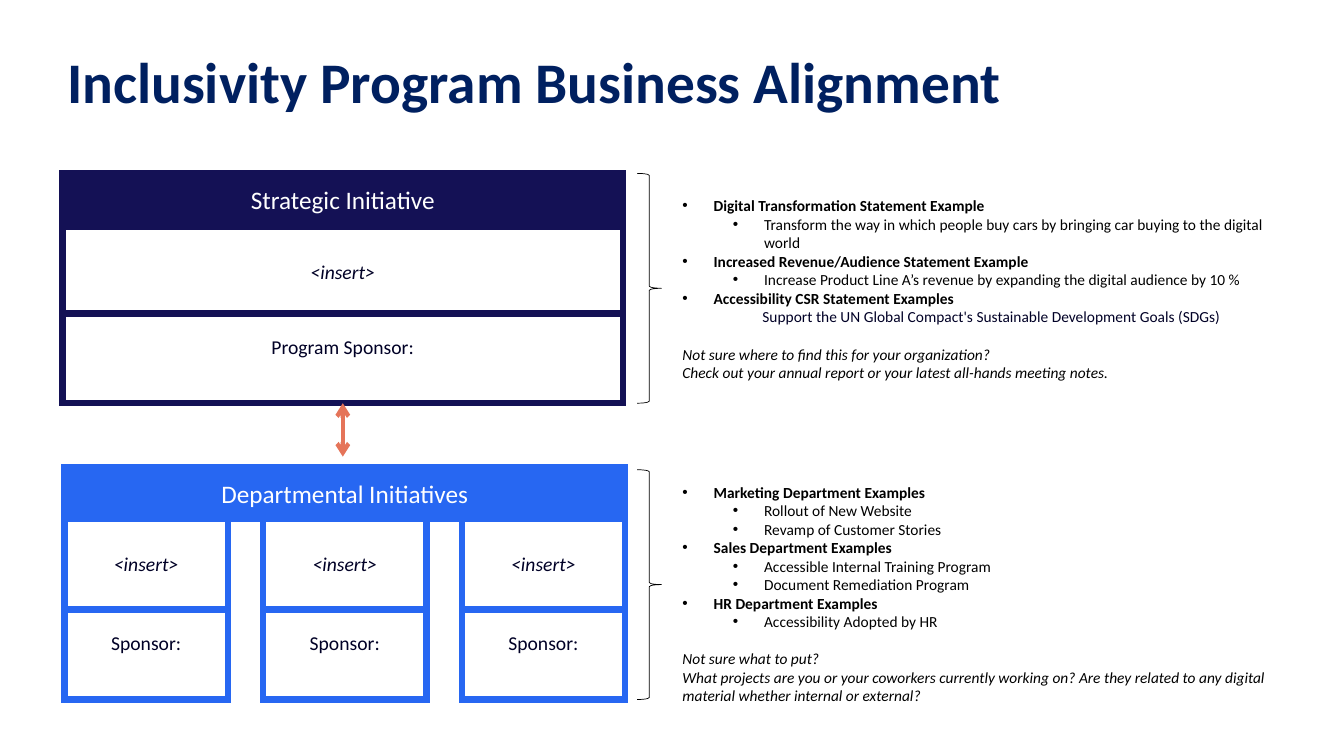
"""Build the slide that aligns an inclusivity program with business initiatives."""
from lxml.etree import SubElement
from pptx import Presentation
from pptx.dml.color import RGBColor
from pptx.enum.shapes import MSO_CONNECTOR, MSO_SHAPE
from pptx.enum.text import MSO_ANCHOR, PP_ALIGN
from pptx.oxml.ns import qn
from pptx.util import Inches, Pt


class Theme:
    face = "Calibri"
    title = RGBColor.from_string("002060")
    navy = RGBColor.from_string("141155")
    blue = RGBColor.from_string("2767F2")
    coral = RGBColor.from_string("E57459")
    ink = RGBColor.from_string("000026")
    black = RGBColor.from_string("000000")
    white = RGBColor.from_string("FFFFFF")
    huge, head, body, note = Pt(41), Pt(18), Pt(14), Pt(11)
    edge, thin, arrow = Pt(4.5), Pt(0.5), Pt(3)


def style(para, size, color, bold=False, italic=False):
    font = para.font
    font.name, font.size, font.color.rgb = Theme.face, size, color
    font.bold, font.italic = bold, italic


def add_box(left, top, width, height, text, edge, kind):
    box = slide.shapes.add_shape(
        MSO_SHAPE.RECTANGLE, Inches(left), Inches(top), Inches(width), Inches(height))
    box.shadow.inherit = False
    box.fill.solid()
    box.fill.fore_color.rgb = edge if kind == "head" else Theme.white
    box.line.color.rgb = edge
    box.line.width = Theme.edge
    SubElement(box.line._get_or_add_ln(), qn("a:miter"), lim="800000")
    frame = box.text_frame
    frame.text = text
    frame.word_wrap = True
    frame.vertical_anchor = MSO_ANCHOR.MIDDLE
    if kind == "sponsor":
        frame.margin_bottom = Inches(0.29)
    para = frame.paragraphs[0]
    para.alignment = PP_ALIGN.CENTER
    if kind == "head":
        style(para, Theme.head, Theme.white)
    else:
        style(para, Theme.body, Theme.ink, italic=kind == "insert")
    return box


deck = Presentation()
deck.slide_width, deck.slide_height = Inches(13.33), Inches(7.5)
slide = deck.slides.add_slide(deck.slide_layouts[5])

title = slide.shapes.title
title.left, title.top, title.width, title.height = map(Inches, (0.36, 0.4, 9.89, 0.79))
title.text_frame.text = "Inclusivity Program Business Alignment"
title.text_frame.vertical_anchor = MSO_ANCHOR.MIDDLE
para = title.text_frame.paragraphs[0]
para.alignment = PP_ALIGN.CENTER
style(para, Theme.huge, Theme.title, bold=True)

add_box(0.62, 1.72, 5.56, 0.52, "Strategic Initiative", Theme.navy, "head")
add_box(0.62, 2.25, 5.56, 0.9, "<insert>", Theme.navy, "insert")
sponsor = add_box(0.62, 3.11, 5.56, 0.89, "Program Sponsor:", Theme.navy, "sponsor")

link = slide.shapes.add_connector(
    MSO_CONNECTOR.STRAIGHT, Inches(3.4), Inches(4), Inches(3.4), Inches(4.53))
link.begin_connect(sponsor, 2)
link.line.color.rgb = Theme.coral
link.line.width = Theme.arrow
for end in ("a:headEnd", "a:tailEnd"):
    SubElement(link.line._get_or_add_ln(), qn(end), type="arrow")
SubElement(link._element.spPr, qn("a:effectLst"))

add_box(0.64, 4.63, 5.56, 0.52, "Departmental Initiatives", Theme.blue, "head")
for col in range(3):
    left = 0.64 + col * 1.97
    add_box(left, 5.15, 1.62, 0.89, "<insert>", Theme.blue, "insert")
    add_box(left, 6.05, 1.62, 0.89, "Sponsor:", Theme.blue, "sponsor")

notes = [
    (1.72, 1.9, 1.77, [
        ("topic", "Digital Transformation Statement Example"),
        ("item", "Transform the way in which people buy cars by bringing car buying "
                 "to the digital world"),
        ("topic", "Increased Revenue/Audience Statement Example"),
        ("item", "Increase Product Line A’s revenue by expanding the digital audience by 10 %"),
        ("topic", "Accessibility CSR Statement Examples"),
        ("goal", "Support the UN Global Compact's Sustainable Development Goals (SDGs)"),
        ("ask", "Not sure where to find this for your organization?"),
        ("hint", "Check out your annual report or your latest all-hands meeting notes."),
    ]),
    (4.66, 4.74, 2.32, [
        ("topic", "Marketing Department Examples"),
        ("item", "Rollout of New Website"),
        ("item", "Revamp of Customer Stories"),
        ("topic", "Sales Department Examples"),
        ("item", "Accessible Internal Training Program"),
        ("item", "Document Remediation Program"),
        ("topic", "HR Department Examples"),
        ("item", "Accessibility Adopted by HR"),
        ("ask", "Not sure what to put?"),
        ("hint", "What projects are you or your coworkers currently working on? "
                 "Are they related to any digital material whether internal or external?"),
    ]),
]
indents = {"topic": 0.31, "item": 0.81}

for top, start, height, lines in notes:
    brace = slide.shapes.add_shape(
        MSO_SHAPE.RIGHT_BRACE, Inches(6.32), Inches(top), Inches(0.24), Inches(2.28))
    brace.shadow.inherit = False
    brace.fill.background()
    brace.line.color.rgb = Theme.black
    brace.line.width = Theme.thin

    frame = slide.shapes.add_textbox(
        Inches(6.67), Inches(start), Inches(6.33), Inches(height)).text_frame
    frame.word_wrap = True
    for row, (kind, text) in enumerate(lines):
        para = frame.add_paragraph() if row else frame.paragraphs[0]
        para.text = text
        style(para, Theme.note, Theme.ink if kind == "goal" else Theme.black,
              bold=kind == "topic", italic=kind in ("ask", "hint"))
        if kind == "goal":
            para.alignment = PP_ALIGN.CENTER
        if kind == "ask":
            para.space_before = Pt(13.4)
        if kind in indents:
            para.level = int(kind == "item")
            props = para._p.get_or_add_pPr()
            props.set("marL", str(Inches(indents[kind])))
            props.set("indent", str(Inches(-0.31)))
            mark = SubElement(props, qn("a:buFont"), typeface="Arial")
            mark.addnext(props.makeelement(qn("a:buChar"), {"char": "•"}))
            props.append(props.find(qn("a:defRPr")))

deck.save("out.pptx")
